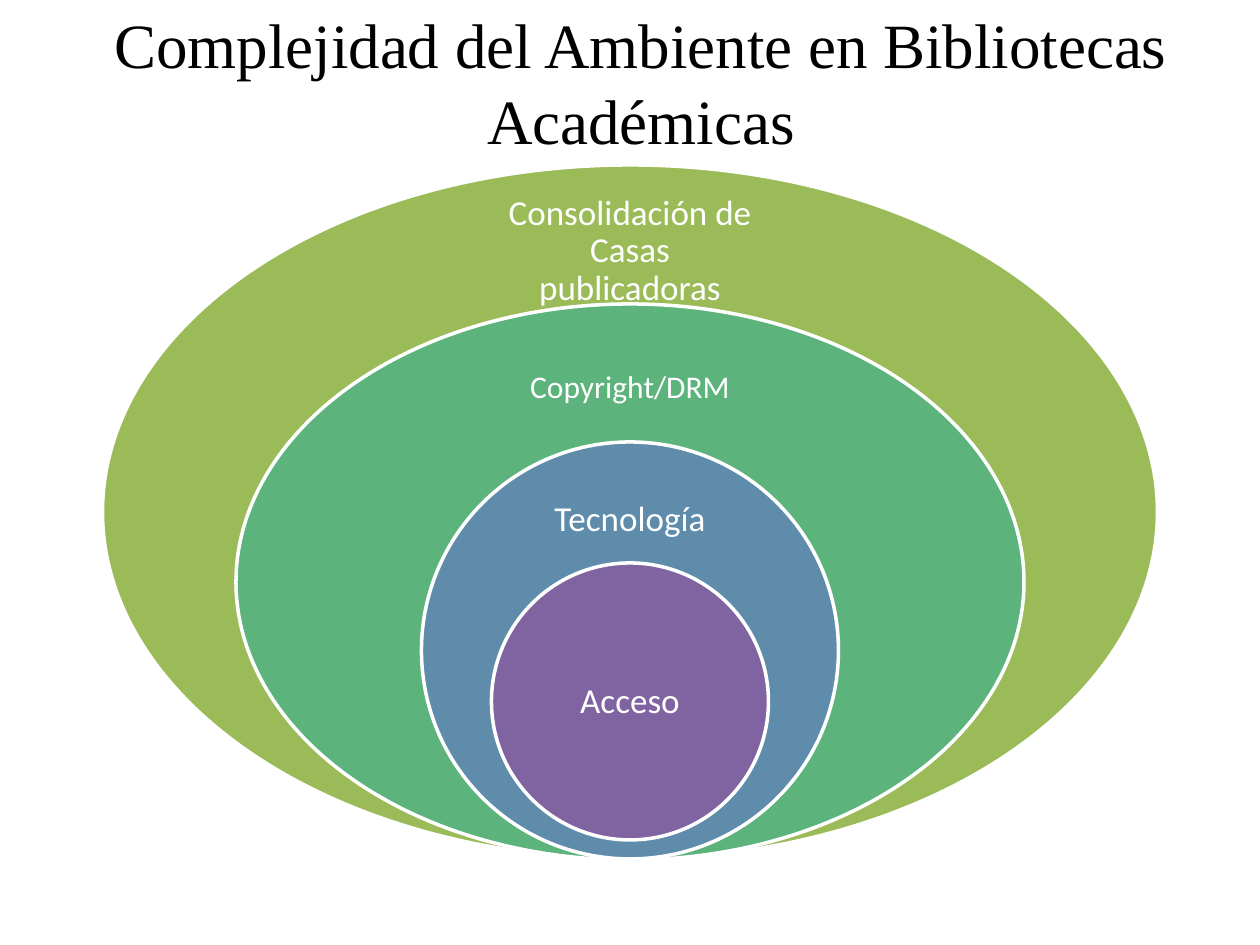
from pptx import Presentation
from pptx.dml.color import RGBColor
from pptx.enum.shapes import MSO_SHAPE
from pptx.enum.text import MSO_ANCHOR, MSO_AUTO_SIZE, PP_ALIGN
from pptx.util import Emu, Pt

BLACK = RGBColor(0x00, 0x00, 0x00)
WHITE = RGBColor(0xFF, 0xFF, 0xFF)
OLIVE = RGBColor(0x9B, 0xBB, 0x59)
GREEN = RGBColor(0x5C, 0xB3, 0x7C)
BLUE = RGBColor(0x60, 0x8C, 0xAB)
PURPLE = RGBColor(0x80, 0x64, 0xA2)
CENTER = 630


def px(length):
    return Emu(round(length * 914400 / 126))


def style_text(frame, font_name, size, color):
    frame.word_wrap = True
    frame.auto_size = MSO_AUTO_SIZE.NONE
    frame.vertical_anchor = MSO_ANCHOR.MIDDLE
    para = frame.paragraphs[0]
    para.alignment = PP_ALIGN.CENTER
    para.font.name = font_name
    para.font.size = Pt(size)
    para.font.color.rgb = color


deck = Presentation()
deck.slide_width, deck.slide_height = px(1260), px(945)
page = deck.slides.add_slide(deck.slide_layouts[5])

title = page.shapes.title
title.left, title.top, title.width, title.height = px(74), px(3), px(1134), px(157)
title.text_frame.text = "Complejidad del Ambiente en Bibliotecas Académicas"
style_text(title.text_frame, "Times New Roman", 36, BLACK)

# Outermost first: text, size, inset, fill, ellipse (top, width, height), label (top, width, height)
layers = [
    ("Consolidación de Casas publicadoras", 20, 20, OLIVE, (165, 1055, 694), (199, 295, 105)),
    ("Copyright/DRM", 18, 18, GREEN, (304, 788, 556), (338, 275, 100)),
    ("Tecnología", 20, 20, BLUE, (442, 417, 417), (474, 194, 93)),
    ("Acceso", 20, 20, PURPLE, (563, 277, 277), (633, 197, 139)),
]

for text, size, inset, fill, ellipse_place, label_place in layers:
    top, width, height = ellipse_place
    ellipse = page.shapes.add_shape(
        MSO_SHAPE.OVAL, px(CENTER - width / 2), px(top), px(width), px(height))
    ellipse.shadow.inherit = False
    ellipse.fill.solid()
    ellipse.fill.fore_color.rgb = fill
    ellipse.line.color.rgb = WHITE
    ellipse.line.width = Pt(2)

    top, width, height = label_place
    label = page.shapes.add_textbox(
        px(CENTER - width / 2), px(top), px(width), px(height))
    frame = label.text_frame
    frame.text = text
    frame.margin_left = frame.margin_right = px(inset)
    frame.margin_top = frame.margin_bottom = px(inset)
    style_text(frame, "Calibri", size, WHITE)
    frame.paragraphs[0].line_spacing = 0.9

deck.save("out.pptx")
